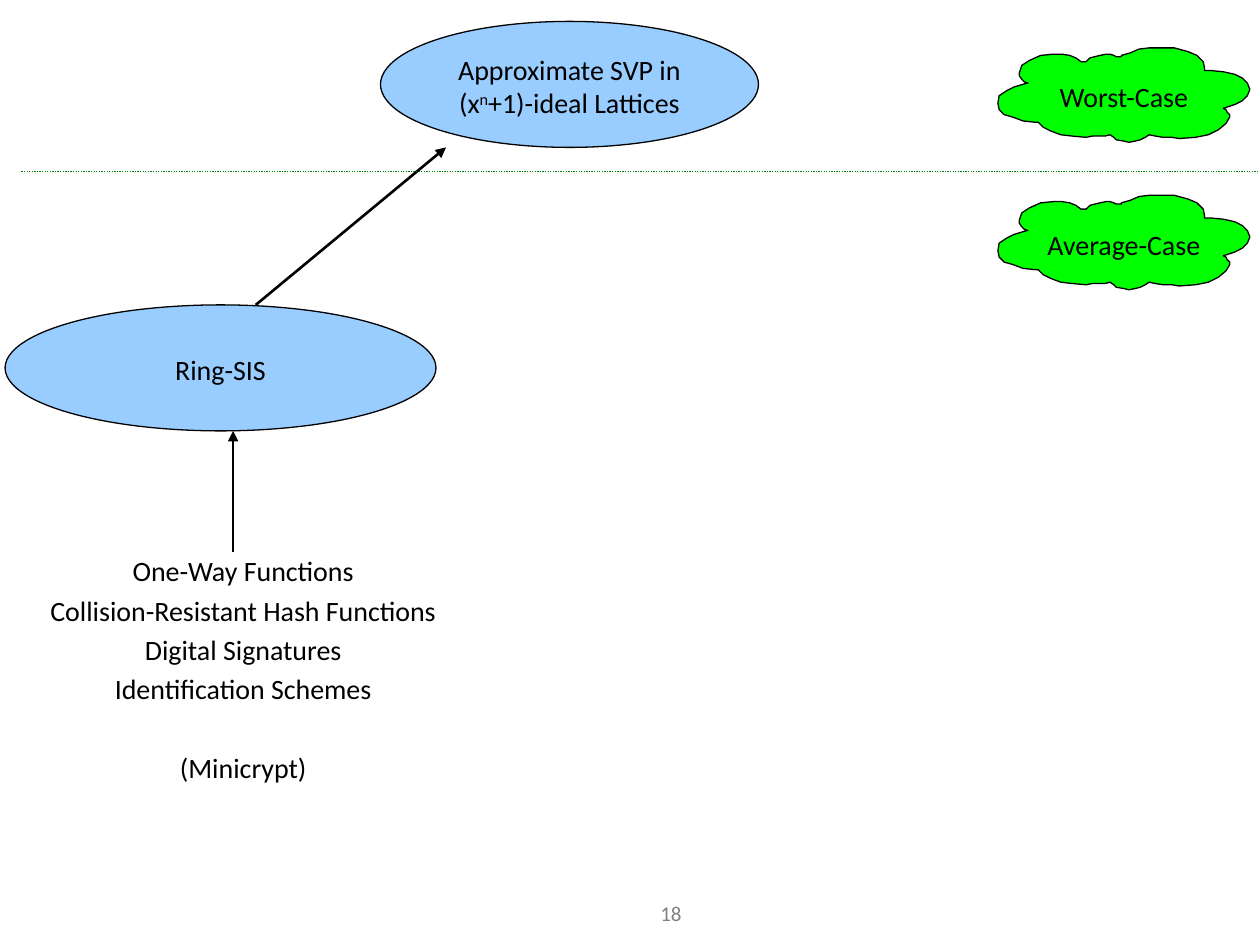
from pptx import Presentation
from pptx.dml.color import RGBColor
from pptx.enum.dml import MSO_LINE
from pptx.enum.shapes import MSO_CONNECTOR, MSO_SHAPE
from pptx.enum.text import MSO_ANCHOR, MSO_AUTO_SIZE, PP_ALIGN
from pptx.oxml.ns import qn
from pptx.util import Inches, Pt
from lxml import etree

OVAL = MSO_SHAPE.OVAL
LINE = MSO_CONNECTOR.STRAIGHT
DOTS = MSO_LINE.ROUND_DOT
MID, TOP = MSO_ANCHOR.MIDDLE, MSO_ANCHOR.TOP
CENTER = PP_ALIGN.CENTER
FIXED = MSO_AUTO_SIZE.NONE

COLORS = {"black": "000000", "blue": "99CCFF", "lime": "00FF00", "green": "008000", "gray": "808080"}

CLOUD = [
    (179, 48), (181, 49), (182, 51), (184, 53), (184, 55), (181, 60), (175, 65), (167, 69),
    (157, 71), (144, 72), (138, 71), (131, 71), (125, 70), (120, 69), (117, 71), (113, 73),
    (109, 74), (104, 75), (100, 74), (94, 73), (92, 71), (89, 69), (85, 70), (79, 70),
    (75, 70), (70, 71), (59, 70), (50, 69), (42, 66), (36, 63), (32, 59), (31, 59),
    (29, 59), (20, 58), (12, 55), (5, 53), (1, 49), (0, 44), (1, 38), (7, 34),
    (13, 31), (23, 28), (24, 28), (21, 27), (19, 25), (17, 22), (17, 20), (19, 14),
    (25, 10), (34, 6), (44, 5), (51, 5), (57, 6), (62, 8), (66, 11), (67, 11),
    (69, 11), (70, 11), (73, 8), (77, 7), (81, 6), (86, 5), (89, 5), (92, 6),
    (94, 7), (97, 7), (98, 7), (98, 6), (105, 4), (112, 1), (120, 0), (129, 0),
    (140, 0), (151, 3), (158, 6), (163, 11), (164, 16), (164, 17), (164, 18), (166, 18),
    (167, 18), (169, 18), (179, 19), (188, 21), (194, 24), (198, 28), (200, 33), (198, 38),
    (194, 42), (188, 45),
]


class Deck:
    """Holds the style and the current slide, and draws each kind of element."""

    font = "Calibri"
    size = 16

    def __init__(self, slide):
        self.slide = slide
        self.shapes = slide.shapes

    def color(self, name):
        return RGBColor.from_string(COLORS[name])

    def text(self, frame, paras, size=size, color="black", anchor=TOP, wrap=True, top=0.05):
        form = {
            "word_wrap": wrap, "auto_size": FIXED, "vertical_anchor": anchor,
            "margin_left": Inches(0.1), "margin_right": Inches(0.1),
            "margin_top": Inches(top), "margin_bottom": Inches(0.05),
        }
        for key, val in form.items():
            setattr(frame, key, val)
        for num, runs in enumerate(paras):
            para = frame.paragraphs[0] if num == 0 else frame.add_paragraph()
            para.alignment = CENTER
            for words, base in runs:
                run = para.add_run()
                run.text = words
                for key, val in {"name": self.font, "size": Pt(size)}.items():
                    setattr(run.font, key, val)
                run.font.color.rgb = self.color(color)
                if base:
                    run._r.get_or_add_rPr().set("baseline", str(base * 1000))

    def paint(self, shape, fill, paras, wrap=True):
        shape.shadow.inherit = False
        shape.fill.solid()
        shape.fill.fore_color.rgb = self.color(fill)
        shape.line.color.rgb = self.color("black")
        shape.line.width = Pt(0.75)
        self.text(shape.text_frame, paras, anchor=MID, wrap=wrap, top=0.07)

    def oval(self, box, paras):
        shape = self.shapes.add_shape(OVAL, *map(Inches, box))
        self.paint(shape, "blue", paras)

    def cloud(self, left, top, words):
        edge = self.shapes.build_freeform(*CLOUD[0], scale=Inches(0.01))
        edge.add_line_segments(CLOUD[1:], close=True)
        shape = edge.convert_to_shape(Inches(left), Inches(top))
        self.paint(shape, "lime", [[(words, 0)]], wrap=False)

    def line(self, start, end, color="black", width=1.5, dash=None, arrow=True):
        link = self.shapes.add_connector(LINE, *map(Inches, start + end))
        link.line.color.rgb = self.color(color)
        link.line.width = Pt(width)
        if dash:
            link.line.dash_style = dash
        prop = link._element.spPr
        if arrow:
            etree.SubElement(prop.get_or_add_ln(), qn("a:tailEnd"), type="triangle")
        etree.SubElement(prop, qn("a:effectLst"))

    def items(self, box, lines, gap):
        body = self.slide.placeholders[1]
        for key, val in zip(("left", "top", "width", "height"), box):
            setattr(body, key, Inches(val))
        self.text(body.text_frame, [[(line, 0)] for line in lines])
        form = {"line_spacing": 1.17, "space_before": Pt(0), "space_after": Pt(0)}
        for para in body.text_frame.paragraphs:
            for key, val in form.items():
                setattr(para, key, val)
            prop = para._p.get_or_add_pPr()
            prop.set("marL", "0")
            prop.set("indent", "0")
            etree.SubElement(prop, qn("a:buNone"))
        body.text_frame.paragraphs[-1].space_before = Pt(gap)

    def label(self, box, words, size, color):
        shape = self.shapes.add_textbox(*map(Inches, box))
        self.text(shape.text_frame, [[(words, 0)]], size, color)


def main():
    show = Presentation()
    show.slide_width, show.slide_height = Inches(10), Inches(7.5)
    slide = show.slides.add_slide(show.slide_layouts[1])
    title = slide.shapes.title._element
    title.getparent().remove(title)

    deck = Deck(slide)
    deck.label((4.71, 7.1, 1.23, 0.4), "18", 12, "gray")
    deck.oval((3.02, 0.17, 3, 1), [
        [("Approximate SVP in", 0)],
        [("(x", 0), ("n", 30), ("+1)-ideal Lattices", 0)],
    ])
    deck.oval((0.04, 2.42, 3.42, 1), [[("Ring-SIS", 0)]])
    deck.line((2.03, 2.42), (3.54, 1.17))
    deck.line((1.85, 4.38), (1.85, 3.42))
    deck.items((0.12, 4.3, 3.62, 2.2), [
        "One-Way Functions",
        "Collision-Resistant Hash Functions",
        "Digital Signatures",
        "Identification Schemes",
        "(Minicrypt)",
    ], gap=22.5)
    deck.line((0.17, 1.36), (10.17, 1.36), "green", 0.75, DOTS, arrow=False)
    for num, words in enumerate(("Worst-Case", "Average-Case")):
        deck.cloud(7.92, 0.38 + 1.17 * num, words)

    show.save("out.pptx")


if __name__ == "__main__":
    main()
